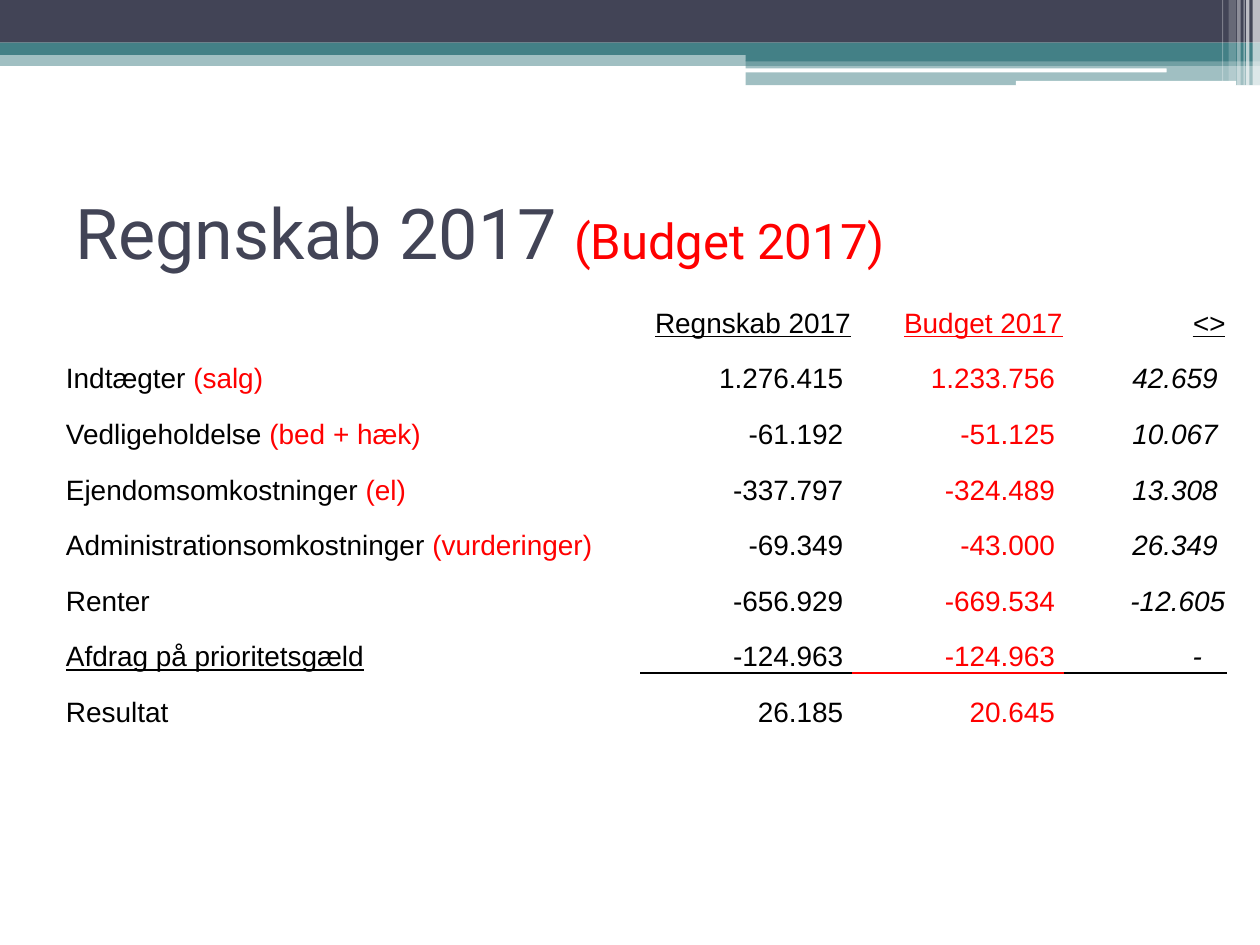
"""Build the slide with the 2017 accounts compared with the budget."""
from lxml import etree
from pptx import Presentation
from pptx.dml.color import RGBColor
from pptx.enum.shapes import MSO_SHAPE
from pptx.enum.text import MSO_ANCHOR, PP_ALIGN
from pptx.oxml import parse_xml
from pptx.oxml.ns import nsdecls, qn
from pptx.util import Cm, Pt

RECT, ROUNDED = MSO_SHAPE.RECTANGLE, MSO_SHAPE.ROUNDED_RECTANGLE
LEFT, RIGHT = PP_ALIGN.LEFT, PP_ALIGN.RIGHT
MIDDLE, BOTTOM = MSO_ANCHOR.MIDDLE, MSO_ANCHOR.BOTTOM
NAVY, TEAL, WHITE, BLACK, RED = "424456", "438086", "FFFFFF", "000000", "FF0000"
NO_STYLE = "{2D5ABB26-0587-4C30-8999-92F81FD0307C}"


def paint(color_format, color):
    color_format.rgb = RGBColor.from_string(color)


def write(paragraph, text, size=16, font="Arial", color=BLACK,
          italic=False, underline=False, align=LEFT):
    paragraph.alignment = align
    run = paragraph.add_run()
    run.text = text
    run.font.size = Pt(size)
    run.font.name = font
    run.font.italic = italic
    run.font.underline = underline
    paint(run.font.color, color)


presentation = Presentation()
presentation.slide_width, presentation.slide_height = Cm(25.4), Cm(19.05)
slide = presentation.slides.add_slide(presentation.slide_layouts[6])

header_bands = [
    (RECT, 0, 1.1, 25.4, 0.15 + 0.08, TEAL, 50),
    (RECT, 0, 0, 25.4, 0.86, NAVY, 100),
    (RECT, 0, 0.86, 25.4, 0.25, TEAL, 100),
    (RECT, 15.03, 0.99, 10.37, 0.25, TEAL, 100),
    (RECT, 15.03, 1.22, 10.37, 0.5, TEAL, 50),
    (ROUNDED, 15.01, 1.38, 8.51, 0.08, WHITE, 100),
    (ROUNDED, 20.48, 1.63, 4.44, 0.1, WHITE, 100),
    (RECT, 25.25, 0, 0.15, 1.73, WHITE, 65),
    (RECT, 25.12, 0, 0.07, 1.73, WHITE, 65),
    (RECT, 25.07, 0, 0.02, 1.73, WHITE, 60),
    (RECT, 24.94, 0, 0.07, 1.73, WHITE, 40),
    (RECT, 24.77, 0, 0.15, 1.63, WHITE, 20),
    (RECT, 24.64, 0, 0.02, 1.63, WHITE, 30),
]
for outline, left, top, width, height, color, opacity in header_bands:
    band = slide.shapes.add_shape(outline, Cm(left), Cm(top), Cm(width), Cm(height))
    band.shadow.inherit = False
    band.line.fill.background()
    band.fill.solid()
    paint(band.fill.fore_color, color)
    if opacity < 100:
        tint = band.fill._xPr.find(".//" + qn("a:srgbClr"))
        etree.SubElement(tint, qn("a:alpha"), val=str(opacity * 1000))

title = slide.shapes.add_textbox(Cm(1.27), Cm(3.18), Cm(22.86), Cm(2.97)).text_frame
title.word_wrap = True
title.vertical_anchor = MIDDLE
write(title.paragraphs[0], "Regnskab 2017 ", size=40, font="Roboto", color=NAVY)
write(title.paragraphs[0], "(Budget 2017)", size=28, font="Roboto", color=RED)

accounts = [
    ("", "", "Regnskab 2017", "Budget 2017", "<>"),
    ("Indtægter", "(salg)", "1.276.415", "1.233.756", "42.659"),
    ("Vedligeholdelse", "(bed + hæk)", "-61.192", "-51.125", "10.067"),
    ("Ejendomsomkostninger", "(el)", "-337.797", "-324.489", "13.308"),
    ("Administrationsomkostninger", "(vurderinger)", "-69.349", "-43.000", "26.349"),
    ("Renter", "", "-656.929", "-669.534", "-12.605"),
    ("Afdrag på prioritetsgæld", "", "-124.963", "-124.963", "-"),
    ("Resultat", "", "26.185", "20.645", ""),
]
SUM_LINE = len(accounts) - 2
column_widths = [11.61, 4.27, 4.27, 3.28]
amount_colors = [BLACK, RED, BLACK]
wider_insets = {"-": 0.5, "-12.605": 0.03}

table_frame = slide.shapes.add_table(len(accounts), len(column_widths), Cm(1.3), Cm(5.72),
                                     Cm(sum(column_widths)), Cm(1.12 * len(accounts)))
table = table_frame.table
table.first_row = table.horz_banding = False
table._tbl.tblPr.find(qn("a:tableStyleId")).text = NO_STYLE
for column, width in zip(table.columns, column_widths):
    column.width = Cm(width)

for row_index, (label, remark, *amounts) in enumerate(accounts):
    table.rows[row_index].height = Cm(1.12)
    is_header = row_index == 0
    for cell in table.rows[row_index].cells:
        cell.fill.background()
        cell.vertical_anchor = BOTTOM
        cell.margin_left = cell.margin_right = cell.margin_top = Cm(0.03)
        cell.margin_bottom = 0

    label_line = table.cell(row_index, 0).text_frame.paragraphs[0]
    if label:
        write(label_line, label + " " if remark else label, underline=row_index == SUM_LINE)
    if remark:
        write(label_line, remark, color=RED)

    for column_index, (amount, color) in enumerate(zip(amounts, amount_colors), 1):
        cell = table.cell(row_index, column_index)
        if amount:
            write(cell.text_frame.paragraphs[0], amount, color=color, align=RIGHT,
                  italic=column_index == 3, underline=is_header)
        if not is_header:
            cell.margin_right = Cm(wider_insets.get(amount, 0.18))
        if row_index == SUM_LINE:
            cell._tc.get_or_add_tcPr().insert(0, parse_xml(
                f'<a:lnB {nsdecls("a")} w="15875"><a:solidFill>'
                f'<a:srgbClr val="{color}"/></a:solidFill></a:lnB>'))

presentation.save("out.pptx")
